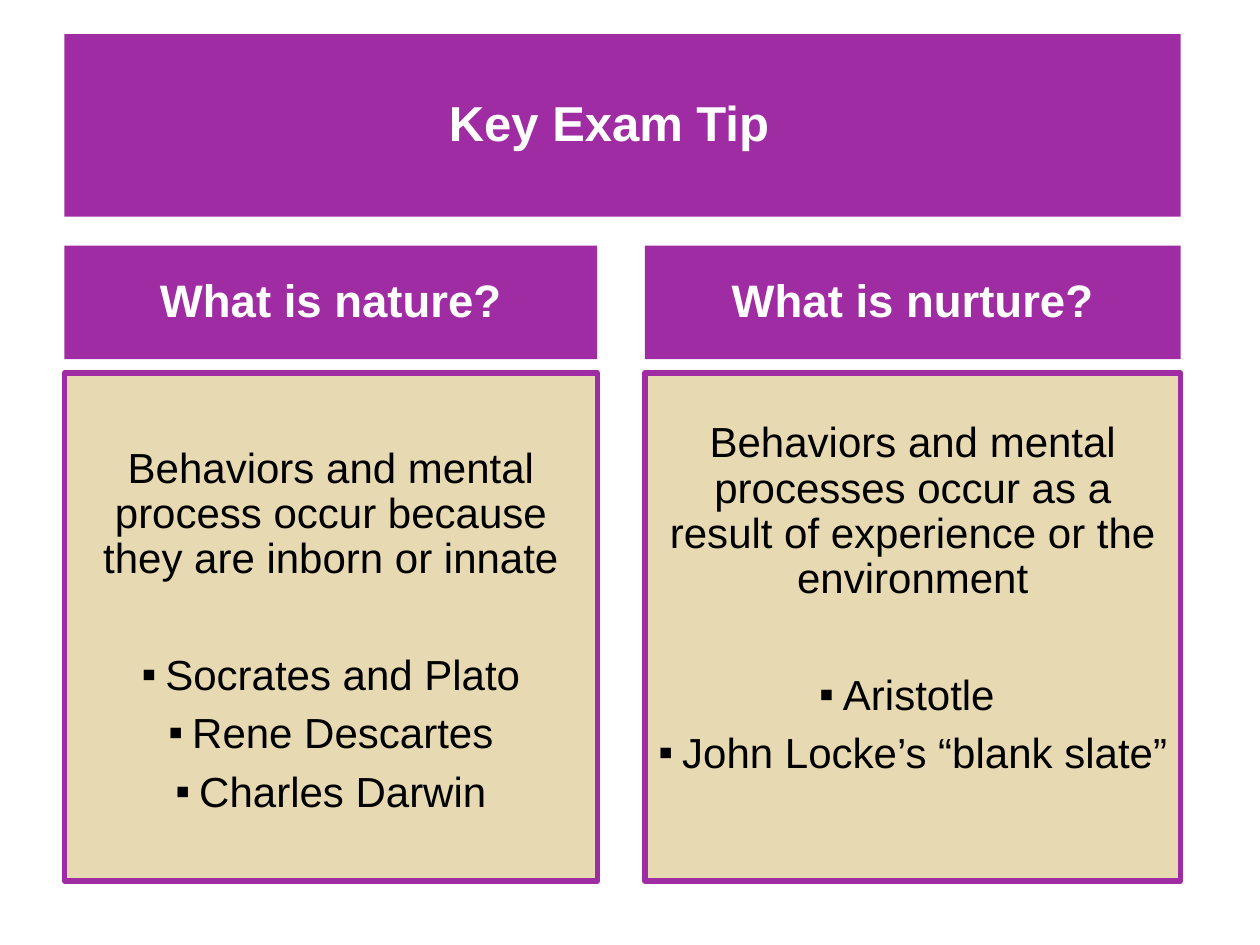
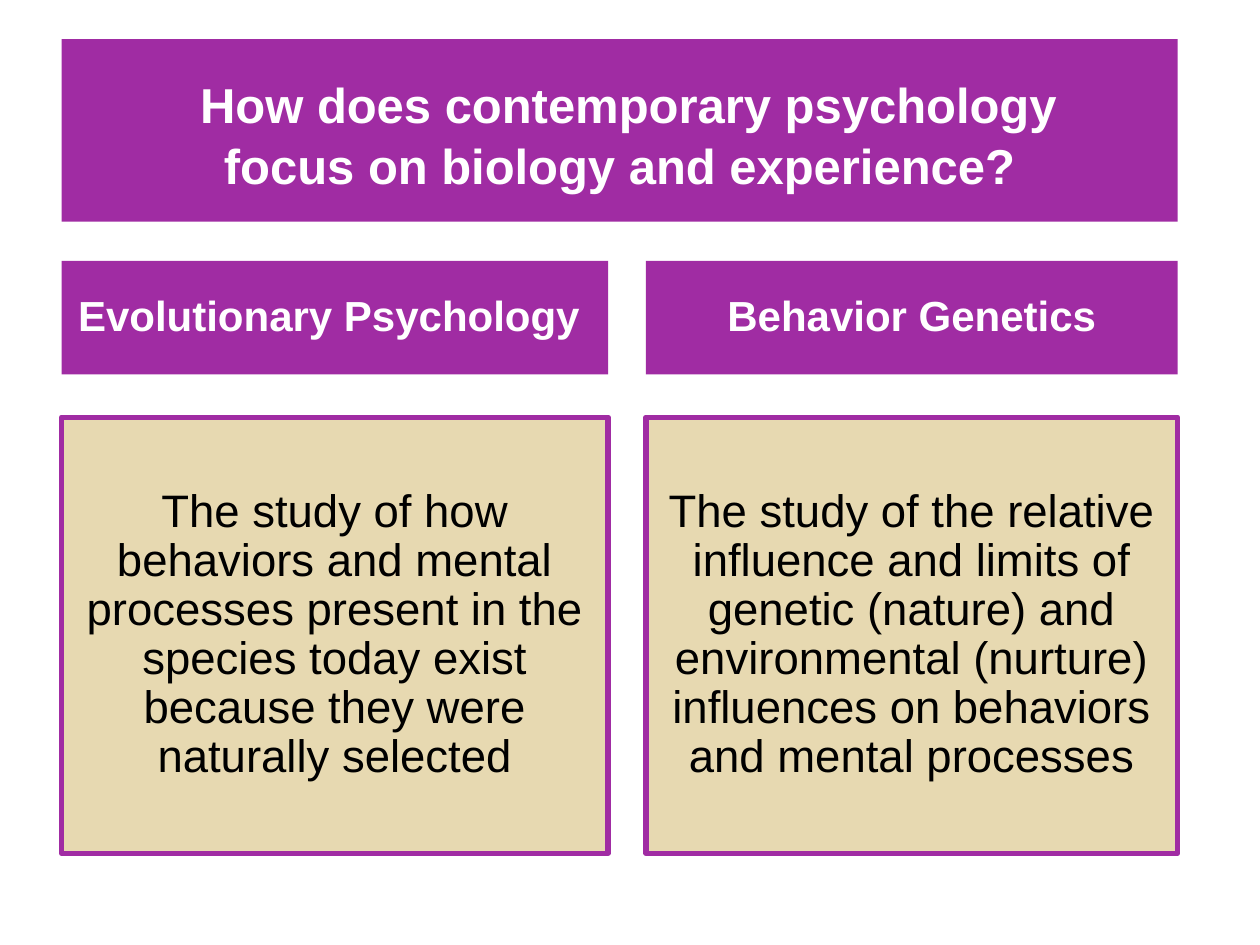
from lxml.etree import SubElement
from pptx import Presentation
from pptx.dml.color import RGBColor
from pptx.enum.text import MSO_ANCHOR, MSO_AUTO_SIZE, PP_ALIGN
from pptx.oxml.ns import qn
from pptx.util import Cm, Pt

COLORS = {"band": "A02CA3", "panel": "E7D9B1", "light": "FFFFFF", "dark": "000000"}
FONT = "Arial"
COMPARISON_LAYOUT = 4
BAND_WIDTH, TITLE_HEIGHT, HEADING_HEIGHT = 22.5, 3.68, 2.29
BULLET_INDENT = 0.48
INSET_X, INSET_Y = 0.25, 0.13

# Lengths in cm, sizes in points. "extra" adds to the named text margins.
SLIDES = [
    {
        "title": ["Key Exam Tip"],
        "title_extra": {"right": 0.55},
        "first_line_indent": 0,
        "left": 1.3, "title_top": 0.69, "heading_top": 4.95,
        "panel_top": 7.52, "panel_height": 10.24,
        "heading_size": 26, "panel_size": 24,
        "columns": [
            {"width": 10.74, "heading": "What is nature?",
             "text": "Behaviors and mental process occur because they are inborn or innate",
             "bullets": ["Socrates and Plato", "Rene Descartes", "Charles Darwin"],
             "extra": {"top": 0.18}},
            {"width": 10.8, "heading": "What is nurture?",
             "text": "Behaviors and mental processes occur as a result of experience "
                     "or the environment",
             "bullets": ["Aristotle ", "John Locke’s “blank slate”"],
             "extra": {"bottom": 1.11}},
        ],
    },
    {
        "title": ["How does contemporary psychology ", "focus on biology and experience?"],
        "title_extra": {"top": 0.16},
        "first_line_indent": 0.63,
        "left": 1.24, "title_top": 0.79, "heading_top": 5.26,
        "panel_top": 8.41, "panel_height": 8.79,
        "heading_size": 24, "panel_size": 26,
        "columns": [
            {"width": 11.02, "heading": "Evolutionary Psychology ",
             "text": "The study of how behaviors and mental processes present in the "
                     "species today exist because they were naturally selected",
             "bullets": [], "extra": {}},
            {"width": 10.72, "heading": "Behavior Genetics",
             "text": "The study of the relative influence and limits of genetic (nature) "
                     "and environmental (nurture) influences on behaviors and mental processes",
             "bullets": [], "extra": {}},
        ],
    },
]


def color(name):
    return RGBColor.from_string(COLORS[name])


def place(shape, box, fill, extra):
    """Move a placeholder to box (cm), fill it and set its text margins."""
    shape.left, shape.top, shape.width, shape.height = map(Cm, box)
    shape.fill.solid()
    shape.fill.fore_color.rgb = color(fill)
    frame = shape.text_frame
    frame.word_wrap = True
    frame.auto_size = MSO_AUTO_SIZE.NONE
    frame.vertical_anchor = MSO_ANCHOR.MIDDLE
    frame.margin_left = Cm(INSET_X)
    frame.margin_right = Cm(INSET_X + extra.get("right", 0))
    frame.margin_top = Cm(INSET_Y + extra.get("top", 0))
    frame.margin_bottom = Cm(INSET_Y + extra.get("bottom", 0))


def style(paragraph, size, text_color, bold=False, before=7.5, spacing=0.9,
          bullet=None, margin=0.0):
    paragraph.alignment = PP_ALIGN.CENTER
    paragraph.line_spacing = spacing
    paragraph.space_before = Pt(before)
    properties = paragraph._p.get_or_add_pPr()
    properties.set("marL", str(Cm(margin)))
    properties.set("indent", str(-Cm(margin) if bullet else 0))
    if bullet:
        SubElement(properties, qn("a:buChar")).set("char", bullet)
    else:
        SubElement(properties, qn("a:buNone"))
    for run in paragraph.runs:
        run.font.name = FONT
        run.font.size = Pt(size)
        run.font.bold = bold
        run.font.color.rgb = color(text_color)


def write_title(shape, lines, first_line_indent):
    frame = shape.text_frame
    for number, line in enumerate(lines):
        paragraph = frame.add_paragraph() if number else frame.paragraphs[0]
        paragraph.text = line
        style(paragraph, 28, "light", bold=True, before=number,
              spacing=0.9 if len(lines) == 1 else 1.0,
              margin=0 if number else first_line_indent)


def write_panel(shape, column, size):
    frame = shape.text_frame
    frame.text = column["text"]
    style(frame.paragraphs[0], size, "dark")
    for number, item in enumerate(column["bullets"]):
        paragraph = frame.add_paragraph()
        paragraph.text = item
        style(paragraph, size, "dark", before=7.5 if number else 40.5,
              bullet="▪", margin=BULLET_INDENT)


def add_comparison(presentation, content):
    slide = presentation.slides.add_slide(presentation.slide_layouts[COMPARISON_LAYOUT])
    title, *bodies = slide.placeholders
    left = content["left"]
    place(title, (left, content["title_top"], BAND_WIDTH, TITLE_HEIGHT),
          "band", content["title_extra"])
    write_title(title, content["title"], content["first_line_indent"])

    for number, column in enumerate(content["columns"]):
        heading, panel = bodies[2 * number:2 * number + 2]
        width = column["width"]
        column_left = left + number * (BAND_WIDTH - width)
        place(heading, (column_left, content["heading_top"], width, HEADING_HEIGHT),
              "band", {})
        heading.text_frame.text = column["heading"]
        style(heading.text_frame.paragraphs[0], content["heading_size"], "light", bold=True)

        place(panel, (column_left, content["panel_top"], width, content["panel_height"]),
              "panel", column["extra"])
        panel.line.color.rgb = color("band")
        panel.line.width = Pt(3)
        write_panel(panel, column, content["panel_size"])


def main():
    presentation = Presentation()
    presentation.slide_width, presentation.slide_height = Cm(25.4), Cm(19.05)
    for content in SLIDES:
        add_comparison(presentation, content)
    presentation.save("out.pptx")


if __name__ == "__main__":
    main()
